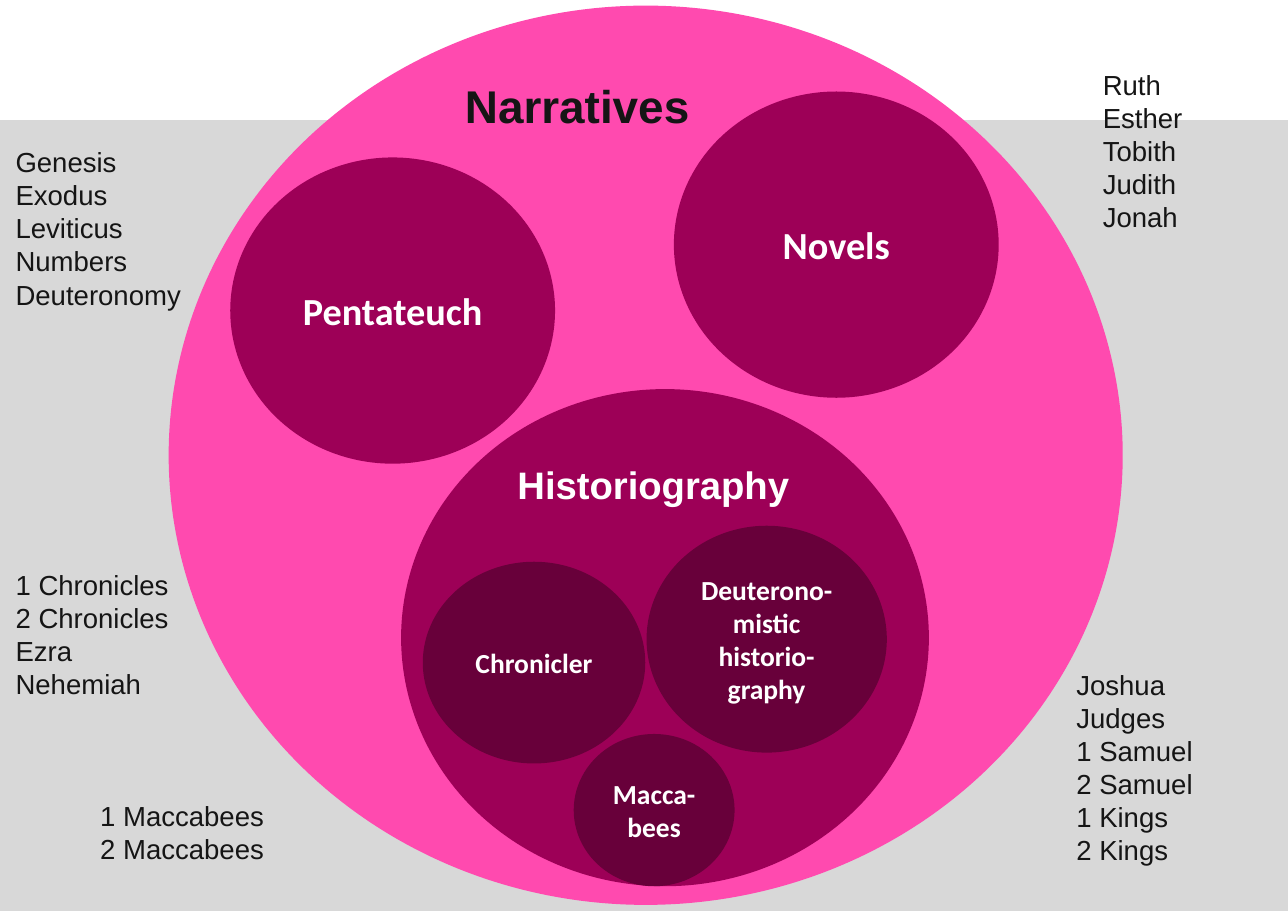
from pptx import Presentation
from pptx.dml.color import RGBColor
from pptx.enum.shapes import MSO_SHAPE as Shape
from pptx.enum.text import MSO_ANCHOR as Anchor, MSO_AUTO_SIZE as AutoSize, PP_ALIGN as Align
from pptx.util import Cm, Pt

WHITE = RGBColor(0xFF, 0xFF, 0xFF)
GREY = RGBColor(0xD8, 0xD8, 0xD8)
INK = RGBColor(0x15, 0x15, 0x15)
PINK = RGBColor(0xFF, 0x4A, 0xAF)
BERRY = RGBColor(0x9D, 0x00, 0x57)
PLUM = RGBColor(0x68, 0x00, 0x3A)
LINE_HEIGHT = 0.76
LIST_PADDING = 0.32


def add_filled(kind, bounds, color):
    shape = slide.shapes.add_shape(kind, *map(Cm, bounds))
    shape.shadow.inherit = False
    shape.fill.solid()
    shape.fill.fore_color.rgb = color
    shape.line.fill.background()
    return shape


def write(shape, lines, size, font_name, color, bold=True, align=Align.CENTER,
          anchor=Anchor.TOP, wrap=False):
    """Fill the shape with one paragraph per line, all in the same style."""
    frame = shape.text_frame
    frame.word_wrap = wrap
    frame.auto_size = AutoSize.NONE if wrap else AutoSize.SHAPE_TO_FIT_TEXT
    frame.vertical_anchor = anchor
    frame.margin_left = frame.margin_right = Cm(0.28)
    frame.margin_top = frame.margin_bottom = Cm(0.15)
    frame.text = "\n".join(lines)
    for para in frame.paragraphs:
        para.alignment = align
        para.font.size = Pt(size)
        para.font.name = font_name
        para.font.bold = bold
        para.font.color.rgb = color


deck = Presentation()
deck.slide_width, deck.slide_height = Cm(29.7), Cm(21)
slide = deck.slides.add_slide(deck.slide_layouts[5])

add_filled(Shape.RECTANGLE, (0, 2.77, 29.7, 18.23), GREY)

# Circles from the outermost group to the innermost: bounds, colour, label, size
circles = [
    ((3.89, 0.13, 22, 20.73), PINK, None, None),
    ((5.31, 3.63, 7.49, 7.06), BERRY, "Pentateuch", 25),
    ((9.25, 8.97, 12.17, 11.46), BERRY, None, None),
    ((15.54, 2.11, 7.49, 7.06), BERRY, "Novels", 25),
    ((9.75, 12.95, 5.13, 4.65), PLUM, "Chronicler", 18),
    ((14.91, 12.12, 5.54, 5.23), PLUM, "Deuterono-mistic historio-graphy", 18),
    ((13.23, 16.92, 3.71, 3.51), PLUM, "Macca-bees", 18),
]
for bounds, color, label, size in circles:
    circle = add_filled(Shape.OVAL, bounds, color)
    if label:
        write(circle, [label], size, "Calibri", WHITE, anchor=Anchor.MIDDLE, wrap=True)

historiography = slide.shapes.add_textbox(Cm(11.61), Cm(10.49), Cm(6.91), Cm(1.37))
write(historiography, ["Historiography"], 25, "Arial", WHITE)

# Books of each group: left, top, width, names
book_lists = [
    (0.08, 3.2, 4.45, ["Genesis", "Exodus", "Leviticus", "Numbers", "Deuteronomy"]),
    (25.15, 1.42, 2.44, ["Ruth", "Esther", "Tobith", "Judith", "Jonah"]),
    (0.08, 12.95, 4.14, ["1 Chronicles", "2 Chronicles", "Ezra", "Nehemiah"]),
    (2.03, 18.26, 4.57, ["1 Maccabees", "2 Maccabees"]),
    (24.54, 15.24, 3.48,
     ["Joshua", "Judges", "1 Samuel", "2 Samuel", "1 Kings", "2 Kings"]),
]
for left, top, width, books in book_lists:
    height = LINE_HEIGHT * len(books) + LIST_PADDING
    box = slide.shapes.add_textbox(Cm(left), Cm(top), Cm(width), Cm(height))
    write(box, books, 18, "Arial", INK, bold=False, align=Align.LEFT)

# The title lies in front of the circles
title = slide.shapes.title
title.left, title.top, title.width, title.height = map(Cm, (10.44, 1.65, 5.79, 1.57))
write(title, ["Narratives"], 30, "Arial", INK, align=Align.LEFT)
title.element.getparent().append(title.element)

deck.save("out.pptx")
